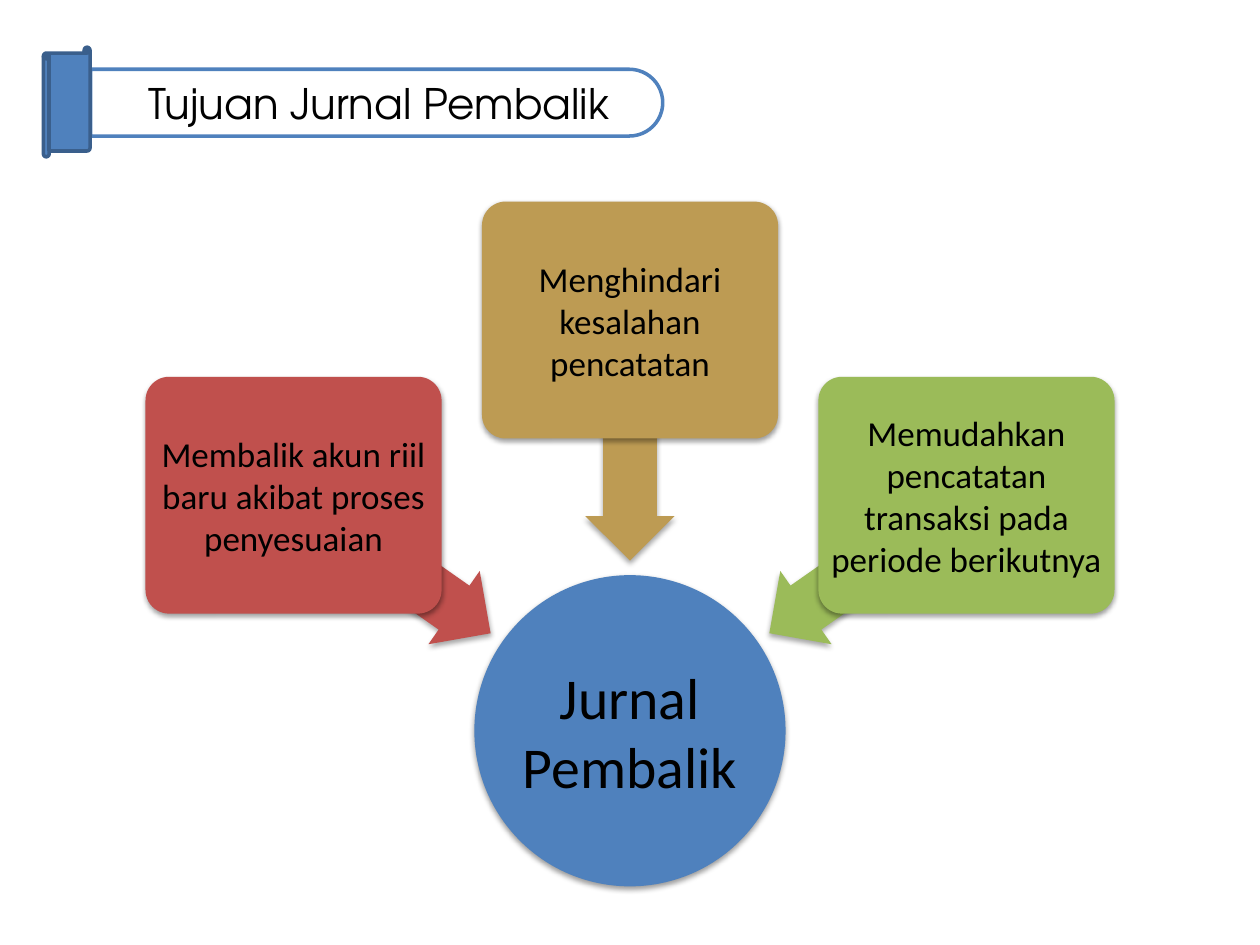
from dataclasses import dataclass
from math import cos, radians, sin

from lxml import etree
from pptx import Presentation
from pptx.dml.color import RGBColor
from pptx.enum import shapes, text
from pptx.oxml.ns import qn
from pptx.util import Inches, Pt

BLUE = RGBColor(0x4F, 0x81, 0xBD)
DARK_BLUE = RGBColor(0x3A, 0x5F, 0x8C)
RED = RGBColor(0xC0, 0x50, 0x4D)
GOLD = RGBColor(0xBD, 0x9B, 0x53)
GREEN = RGBColor(0x9B, 0xBB, 0x59)
WHITE = RGBColor(0xFF, 0xFF, 0xFF)
BLACK = RGBColor(0, 0, 0)

HUB_X, HUB_Y, HUB_SIZE = 5, 5.8, 2.47
BOX_DISTANCE = 3.26
BOX_W, BOX_H = 2.35, 1.88
ARROW_W, ARROW_H = 1.91, 0.71
BAR_X, BAR_Y, BAR_W, BAR_H = 0.72, 0.55, 4.54, 0.53


@dataclass
class Purpose:
    label: str
    color: RGBColor
    angle: float


PURPOSES = [
    Purpose("Membalik akun riil baru akibat proses penyesuaian", RED, 35),
    Purpose("Menghindari kesalahan pencatatan", GOLD, 90),
    Purpose("Memudahkan pencatatan transaksi pada periode berikutnya", GREEN, 145),
]


def add_centered(s, kind, x: float, y: float, w: float, h: float, color: RGBColor):
    sp = s.shapes.add_shape(
        kind, Inches(x - w / 2), Inches(y - h / 2), Inches(w), Inches(h))
    sp.shadow.inherit = False
    sp.fill.solid()
    sp.fill.fore_color.rgb = color
    sp.line.fill.background()
    return sp


def add_shadow(sp, distance: float, opacity: int) -> None:
    effects = sp.element.spPr.find(qn("a:effectLst"))
    shadow = etree.SubElement(
        effects, qn("a:outerShdw"), blurRad=str(Pt(3.1)), dist=str(Pt(distance)),
        dir="5400000", rotWithShape="0")
    color = etree.SubElement(shadow, qn("a:srgbClr"), val="000000")
    etree.SubElement(color, qn("a:alpha"), val=str(opacity * 1000))


def add_outline(sp, color: RGBColor) -> None:
    sp.line.color.rgb = color
    sp.line.width = Pt(2)


def write_label(sp, label: str, size: float) -> None:
    tf = sp.text_frame
    tf.word_wrap = True
    tf.vertical_anchor = text.MSO_ANCHOR.MIDDLE
    tf.margin_left = tf.margin_right = tf.margin_top = tf.margin_bottom = 0
    p = tf.paragraphs[0]
    p.text = label
    p.alignment = text.PP_ALIGN.CENTER
    p.font.name = "Calibri"
    p.font.size = Pt(size)
    p.font.color.rgb = BLACK


def add_purpose(s, purpose: Purpose) -> None:
    dx, dy = cos(radians(purpose.angle)), sin(radians(purpose.angle))
    x, y = HUB_X - BOX_DISTANCE * dx, HUB_Y - BOX_DISTANCE * dy
    arrow = add_centered(
        s, shapes.MSO_SHAPE.LEFT_ARROW, x + ARROW_W / 2 * dx, y + ARROW_W / 2 * dy,
        ARROW_W, ARROW_H, purpose.color)
    arrow.adjustments[0] = 0.6
    arrow.rotation = purpose.angle + 180
    add_shadow(arrow, 1.8, 35)
    box = add_centered(
        s, shapes.MSO_SHAPE.ROUNDED_RECTANGLE, x, y, BOX_W, BOX_H, purpose.color)
    box.adjustments[0] = 0.1
    add_shadow(box, 1.6, 38)
    write_label(box, purpose.label, 20)


def add_title(s) -> None:
    bar = add_centered(
        s, shapes.MSO_SHAPE.ROUND_2_SAME_RECTANGLE, BAR_X + BAR_W / 2,
        BAR_Y + BAR_H / 2, BAR_H, BAR_W, WHITE)
    bar.adjustments[0] = 0.5
    bar.rotation = 90
    add_outline(bar, BLUE)
    scroll = add_centered(
        s, shapes.MSO_SHAPE.HORIZONTAL_SCROLL, 0.53, 0.81, 0.37, 0.87, BLUE)
    add_outline(scroll, DARK_BLUE)

    title = s.shapes.title
    title.left, title.top = Inches(BAR_X), Inches(BAR_Y)
    title.width, title.height = Inches(BAR_W), Inches(BAR_H)
    tf = title.text_frame
    tf.word_wrap = False
    tf.vertical_anchor = text.MSO_ANCHOR.MIDDLE
    tf.margin_left = Inches(0.46)
    p = tf.paragraphs[0]
    p.text = "Tujuan Jurnal Pembalik"
    p.alignment = text.PP_ALIGN.LEFT
    p.font.name = "TeX Gyre Adventor"
    p.font.size = Pt(24)
    p.font.color.rgb = BLACK
    title.element.getparent().append(title.element)


def main() -> None:
    prs = Presentation()
    prs.slide_width, prs.slide_height = Inches(10), Inches(7.5)
    s = prs.slides.add_slide(prs.slide_layouts[5])
    hub = add_centered(
        s, shapes.MSO_SHAPE.OVAL, HUB_X, HUB_Y, HUB_SIZE, HUB_SIZE, BLUE)
    add_shadow(hub, 1.6, 38)
    write_label(hub, "Jurnal Pembalik", 33)
    for purpose in PURPOSES:
        add_purpose(s, purpose)
    add_title(s)
    prs.save("out.pptx")


if __name__ == "__main__":
    main()
